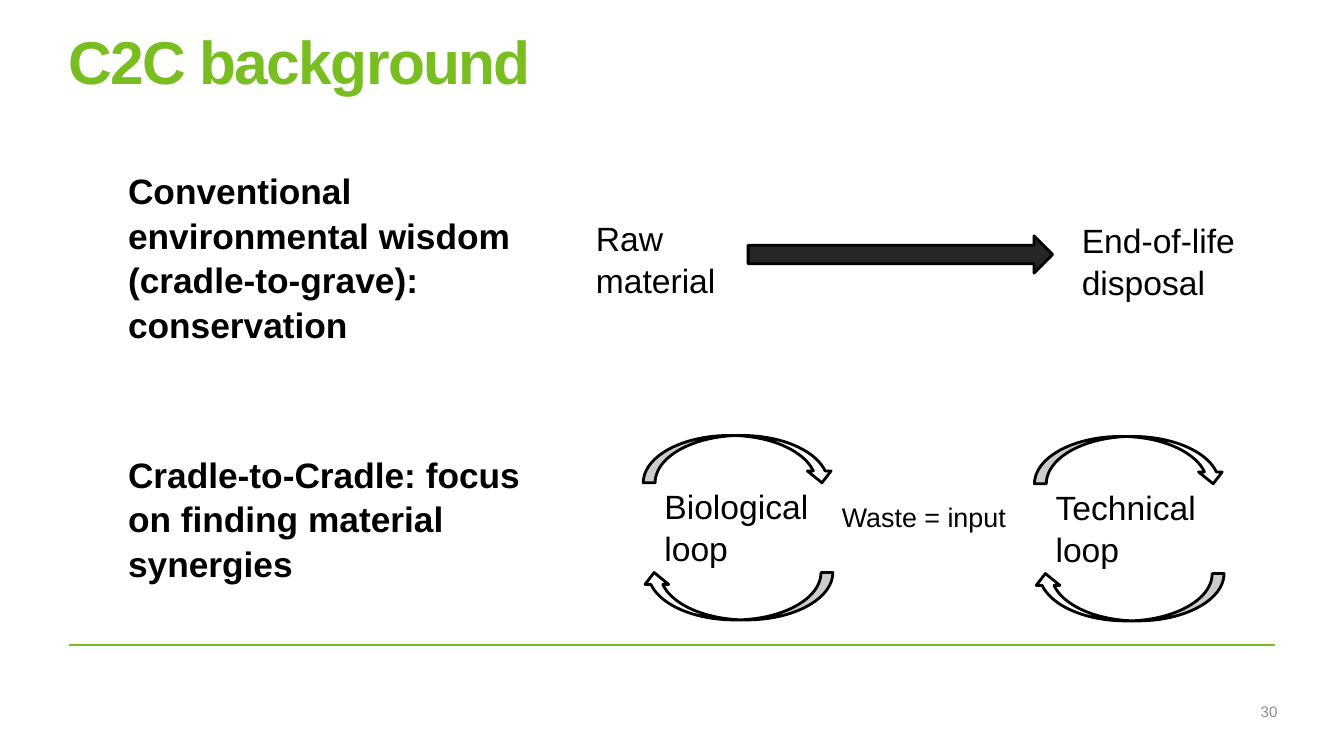
from lxml import etree
from pptx import Presentation
from pptx.dml.color import RGBColor
from pptx.enum.shapes import MSO_CONNECTOR, MSO_SHAPE
from pptx.enum.text import MSO_ANCHOR, PP_ALIGN
from pptx.oxml.ns import qn
from pptx.util import Inches, Pt

STRAIGHT = MSO_CONNECTOR.STRAIGHT
RIGHT_ARROW = MSO_SHAPE.RIGHT_ARROW
CURVED_ARROW = MSO_SHAPE.CURVED_DOWN_ARROW
TOP, MIDDLE = MSO_ANCHOR.TOP, MSO_ANCHOR.MIDDLE
LEFT, RIGHT = PP_ALIGN.LEFT, PP_ALIGN.RIGHT

GREEN, BLACK, WHITE = "78BE20", "000000", "FFFFFF"
DARK, GREY = "262626", "8C8C8C"


def rgb(value):
    return RGBColor.from_string(value)


def inches(values):
    return [Inches(value) for value in values]


def write(frame, paragraphs, size, color=BLACK, bold=False, anchor=TOP,
          gap=0, **paragraph_format):
    """Fill a frame; gap is the space in points between paragraphs."""
    frame_format = dict(word_wrap=True, vertical_anchor=anchor, margin_left=0,
                        margin_right=0, margin_top=0, margin_bottom=0)
    for name, value in frame_format.items():
        setattr(frame, name, value)
    for index, text in enumerate(paragraphs):
        paragraph = frame.paragraphs[0] if index == 0 else frame.add_paragraph()
        settings = {"alignment": LEFT, "line_spacing": 1.05,
                    "space_before": Pt(gap if index else 0), **paragraph_format}
        for name, value in settings.items():
            setattr(paragraph, name, value)
        run = paragraph.add_run()
        run.text = text
        for name, value in dict(name="Arial", size=Pt(size), bold=bold).items():
            setattr(run.font, name, value)
        run.font.color.rgb = rgb(color)


def add_title(slide, text):
    title = slide.shapes.title
    box = dict(zip(("left", "top", "width", "height"),
                   inches((0.68, 0.35, 11.97, 1.31))))
    for name, value in box.items():
        setattr(title, name, value)
    write(title.text_frame, [text], 43.2, GREEN, bold=True, line_spacing=0.85)
    run = title.text_frame.paragraphs[0].runs[0]
    run.font._element.set("spc", "-120")


def add_text(slide, box, paragraphs, size=24, **options):
    label = slide.shapes.add_textbox(*inches(box))
    write(label.text_frame, paragraphs, size, **options)


def add_arrow(slide, kind, box, fill, rotation=0):
    arrow = slide.shapes.add_shape(kind, *inches(box))
    arrow.shadow.inherit = False
    arrow.rotation = rotation
    arrow.fill.solid()
    arrow.fill.fore_color.rgb = rgb(fill)
    arrow.line.color.rgb = rgb(BLACK)
    arrow.line.width = Pt(2)


def add_loop(slide, left, top, text):
    """A label between two curved arrows that chase each other."""
    add_arrow(slide, CURVED_ARROW, (left, top, 1.89, 0.47), WHITE)
    add_arrow(slide, CURVED_ARROW, (left - 0.01, top + 1.36, 1.89, 0.47),
              WHITE, rotation=180)
    add_text(slide, (left + 0.21, top + 0.48, 1.64, 0.81), [text])


def add_footer_rule(slide):
    rule = slide.shapes.add_connector(STRAIGHT, *inches((0.68, 6.4, 12.65, 6.4)))
    rule.line.color.rgb = rgb(GREEN)
    rule.line.width = Pt(1)
    etree.SubElement(rule._element.spPr, qn("a:effectLst"))


def main():
    prs = Presentation()
    prs.slide_width, prs.slide_height = inches((13.33, 7.5))
    slide = prs.slides.add_slide(prs.slide_layouts[5])

    add_footer_rule(slide)
    add_title(slide, "C2C background")
    add_text(slide, (1.27, 1.66, 4.07, 4.38), [
        "Conventional environmental wisdom (cradle-to-grave): conservation",
        "Cradle-to-Cradle: focus on finding material synergies",
    ], 25.2, bold=True, gap=75.5)
    add_text(slide, (7.92, 6.96, 4.75, 0.18), ["30"], 10.8, color=GREY,
             anchor=MIDDLE, alignment=RIGHT)

    add_text(slide, (5.91, 2.14, 1.32, 0.81), ["Raw material"])
    add_arrow(slide, RIGHT_ARROW, (7.42, 2.34, 3.02, 0.37), DARK)
    add_text(slide, (10.73, 2.16, 1.7, 0.81), ["End-of-life disposal"])

    add_loop(slide, 6.38, 4.32, "Biological loop")
    add_text(slide, (8.35, 4.95, 1.64, 0.32), ["Waste = input"], 19.2)
    add_loop(slide, 10.26, 4.33, "Technical loop")

    prs.save("out.pptx")


if __name__ == "__main__":
    main()
